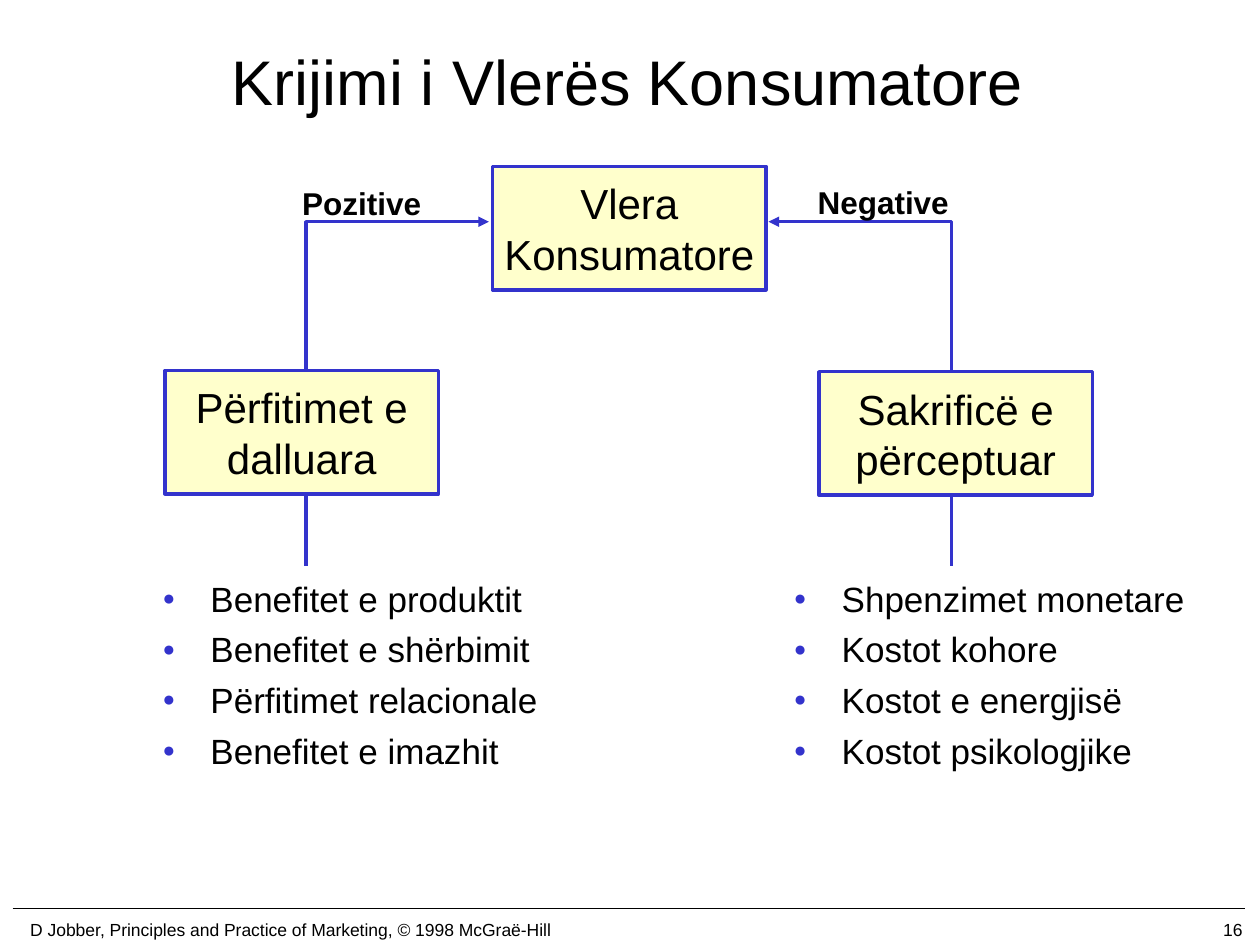
from lxml.etree import SubElement
from pptx import Presentation
from pptx.dml.color import RGBColor
from pptx.enum.shapes import MSO_CONNECTOR, MSO_SHAPE
from pptx.enum.text import MSO_ANCHOR, MSO_AUTO_SIZE, PP_ALIGN
from pptx.oxml.ns import qn
from pptx.util import Inches, Pt

BLACK = RGBColor(0, 0, 0)
BLUE = RGBColor(0x33, 0x33, 0xCC)
CREAM = RGBColor(0xFF, 0xFF, 0xCC)


class Deck:
    font = "Arial"

    def __init__(self, slide):
        self.slide = slide
        self.shapes = slide.shapes

    def place(self, shape, left, top, width, height):
        shape.left, shape.top = Inches(left), Inches(top)
        shape.width, shape.height = Inches(width), Inches(height)

    def style(self, para, size, align=PP_ALIGN.LEFT, bold=False):
        para.alignment = align
        for run in para.runs:
            font = run.font
            font.name, font.size, font.bold = self.font, Pt(size), bold
            font.color.rgb = BLACK

    def title(self, text, *area):
        shape = self.shapes.title
        self.place(shape, *area)
        frame = shape.text_frame
        frame.text = text
        frame.auto_size = MSO_AUTO_SIZE.NONE
        frame.vertical_anchor = MSO_ANCHOR.MIDDLE
        self.style(frame.paragraphs[0], 36, PP_ALIGN.CENTER)

    def bullet(self, para):
        props = para._p.get_or_add_pPr()
        props.set("marL", str(Inches(0.38)))
        props.set("indent", str(-Inches(0.38)))
        color = SubElement(props, qn("a:buClr"))
        SubElement(color, qn("a:srgbClr"), val=str(BLUE))
        SubElement(props, qn("a:buSzPct"), val="60000")
        SubElement(props, qn("a:buFont"), typeface=self.font)
        SubElement(props, qn("a:buChar"), char="●")

    def list(self, index, items, *area):
        shape = self.slide.placeholders[index]
        self.place(shape, *area)
        frame = shape.text_frame
        frame.text = "\n".join(items)
        frame.auto_size = MSO_AUTO_SIZE.NONE
        for i, para in enumerate(frame.paragraphs):
            self.bullet(para)
            para.space_before = Pt(5 if i else 0)
            self.style(para, 20)

    def label(self, text, left, top, width, height, size,
              align=PP_ALIGN.LEFT, bold=False, anchor=MSO_ANCHOR.TOP):
        shape = self.shapes.add_textbox(
            Inches(left), Inches(top), Inches(width), Inches(height))
        frame = shape.text_frame
        frame.word_wrap = True
        frame.vertical_anchor = anchor
        frame.text = text
        self.style(frame.paragraphs[0], size, align, bold)

    def box(self, text, left, top):
        shape = self.shapes.add_shape(
            MSO_SHAPE.RECTANGLE, Inches(left), Inches(top),
            Inches(2.17), Inches(0.98))
        shape.shadow.inherit = False
        shape.fill.solid()
        shape.fill.fore_color.rgb = CREAM
        shape.line.color.rgb = BLUE
        shape.line.width = Pt(2)
        frame = shape.text_frame
        frame.margin_left = frame.margin_right = Inches(0.02)
        frame.word_wrap = True
        frame.vertical_anchor = MSO_ANCHOR.MIDDLE
        frame.text = text
        self.style(frame.paragraphs[0], 24, PP_ALIGN.CENTER)

    def elbow(self, start, end):
        top, low = Inches(1.76), Inches(4.49)
        form = self.shapes.build_freeform(Inches(start), low)
        form.add_line_segments(
            [(Inches(start), top), (Inches(end), top)], close=False)
        shape = form.convert_to_shape()
        shape.shadow.inherit = False
        shape.fill.background()
        shape.line.color.rgb = BLUE
        shape.line.width = Pt(2)
        SubElement(shape.line._get_or_add_ln(), qn("a:tailEnd"),
                   type="triangle")

    def rule(self, left, right, top):
        line = self.shapes.add_connector(
            MSO_CONNECTOR.STRAIGHT, Inches(left), Inches(top),
            Inches(right), Inches(top))
        line.line.color.rgb = BLACK
        line.line.width = Pt(1)
        SubElement(line._element.spPr, qn("a:effectLst"))


def main():
    prs = Presentation()
    prs.slide_width, prs.slide_height = Inches(10), Inches(7.5)
    deck = Deck(prs.slides.add_slide(prs.slide_layouts[3]))

    deck.title("Krijimi i Vlerës Konsumatore", 0.73, 0.01, 8.5, 1.25)
    deck.list(1, ["Benefitet e produktit", "Benefitet e shërbimit",
                  "Përfitimet relacionale", "Benefitet e imazhit"],
              1.19, 4.53, 4.17, 1.66)
    deck.list(2, ["Shpenzimet monetare", "Kostot kohore",
                  "Kostot e energjisë", "Kostot psikologjike"],
              6.2, 4.53, 3.33, 1.66)

    deck.elbow(7.55, 6.1)
    deck.elbow(2.43, 3.88)
    deck.box("Vlera Konsumatore", 3.91, 1.32)
    deck.box("Përfitimet e dalluara", 1.31, 2.94)
    deck.box("Sakrificë e përceptuar", 6.5, 2.95)
    deck.label("Pozitive", 2.3, 1.41, 1.31, 0.41, 18, bold=True)
    deck.label("Negative", 6.39, 1.4, 1.31, 0.41, 18, bold=True)

    deck.rule(0.1, 9.88, 7.21)
    deck.label("D Jobber, Principles and Practice of Marketing, "
               "© 1998 McGraë-Hill", 0, 7.25, 4.61, 0.25, 10,
               PP_ALIGN.CENTER, anchor=MSO_ANCHOR.MIDDLE)
    deck.label("16", 7.88, 7.25, 2.08, 0.25, 10,
               PP_ALIGN.RIGHT, anchor=MSO_ANCHOR.MIDDLE)
    prs.save("out.pptx")


if __name__ == "__main__":
    main()
